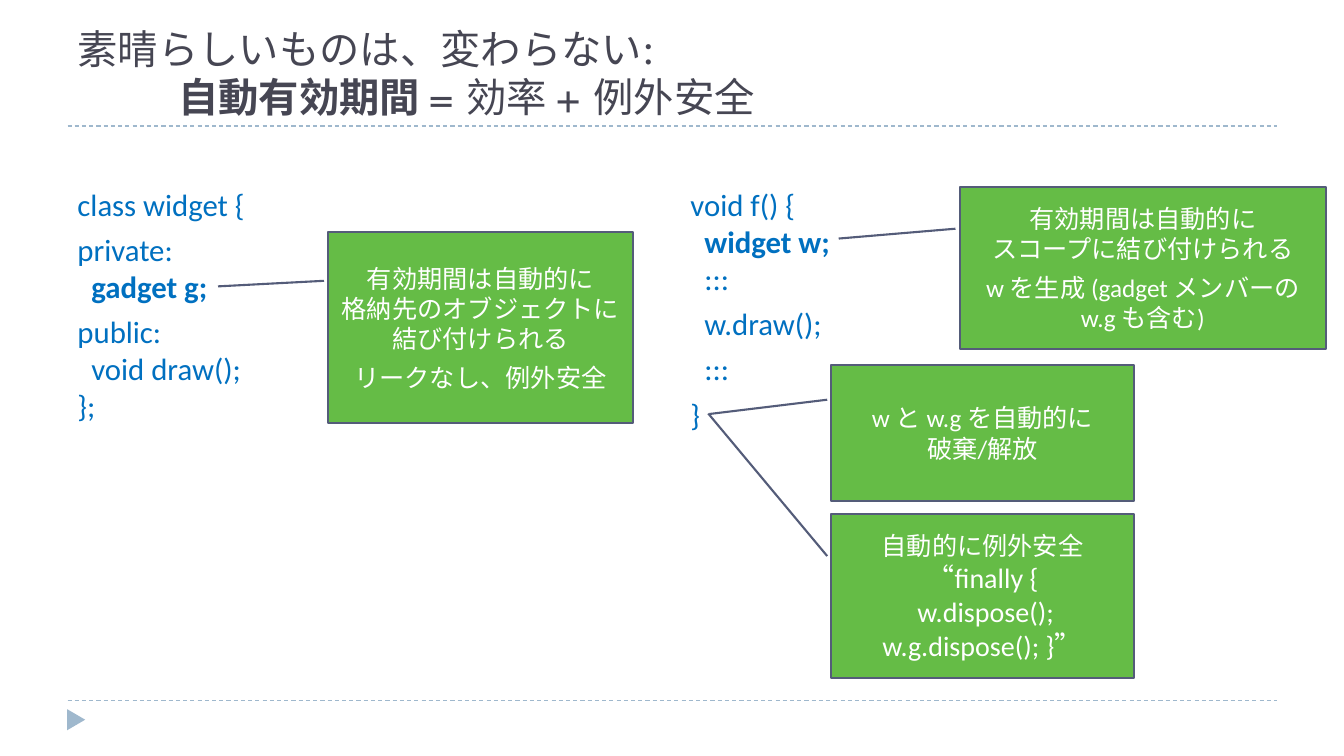
from dataclasses import dataclass

from lxml import etree
from pptx import Presentation
from pptx.dml.color import RGBColor
from pptx.enum.dml import MSO_LINE
from pptx.enum.shapes import MSO_CONNECTOR, MSO_SHAPE
from pptx.enum.text import MSO_ANCHOR, PP_ALIGN
from pptx.oxml.ns import qn
from pptx.util import Inches, Pt

DASH = MSO_LINE.DASH
STRAIGHT = MSO_CONNECTOR.STRAIGHT
CALLOUT, TRIANGLE = MSO_SHAPE.LINE_CALLOUT_1, MSO_SHAPE.ISOSCELES_TRIANGLE
BOTTOM, MIDDLE, TOP = MSO_ANCHOR.BOTTOM, MSO_ANCHOR.MIDDLE, MSO_ANCHOR.TOP
LEFT, CENTER = PP_ALIGN.LEFT, PP_ALIGN.CENTER


@dataclass(frozen=True)
class Theme:
    ink: RGBColor = RGBColor(0x46, 0x46, 0x53)
    code: RGBColor = RGBColor(0x00, 0x70, 0xC0)
    rule: RGBColor = RGBColor(0x9F, 0xB8, 0xCD)
    note: RGBColor = RGBColor(0x65, 0xBC, 0x46)
    edge: RGBColor = RGBColor(0x54, 0x5C, 0x79)
    white: RGBColor = RGBColor(0xFF, 0xFF, 0xFF)
    head: str = "TeX Gyre Bonum"
    body: str = "Calibri"
    title_size: float = 28.8
    code_size: float = 22
    note_size: float = 18
    quote_size: float = 20


THEME = Theme()


def put_text(frame, paras, font, size, color, anchor=TOP, align=LEFT, gap=0):
    """Fill a frame; each paragraph is a list of (text, bold, size or None)."""
    frame.word_wrap = True
    frame.vertical_anchor = anchor
    for i, runs in enumerate(paras):
        para = frame.paragraphs[0] if i == 0 else frame.add_paragraph()
        para.alignment = align
        para.space_before = Pt(gap if i else 0)
        for text, bold, own in runs:
            for j, line in enumerate(text.split("\n")):
                if j:
                    para.add_line_break()
                if line:
                    run = para.add_run()
                    run.text = line
                    run.font.name = font
                    run.font.size = Pt(own or size)
                    run.font.bold = bold
                    run.font.color.rgb = color


def add_box(slide, box):
    return slide.shapes.add_textbox(*map(Inches, box)).text_frame


def add_rule(slide, left, top, width):
    line = slide.shapes.add_connector(
        STRAIGHT, Inches(left), Inches(top), Inches(left + width), Inches(top))
    line.line.color.rgb = THEME.rule
    line.line.width = Pt(0.75)
    line.line.dash_style = DASH
    etree.SubElement(line._element.spPr, qn("a:effectLst"))


def add_title(slide, box):
    left, top, width, height = box
    frame = add_box(slide, box)
    put_text(frame, [
        [("素晴らしいものは、変わらない:", False, None)],
        [("自動有効期間 ", True, None), ("= 効率 + 例外安全", False, None)],
    ], THEME.head, THEME.title_size, THEME.ink, BOTTOM)
    frame.paragraphs[1]._p.get_or_add_pPr().set("marL", str(Inches(1)))
    add_rule(slide, left, top + height, width)


def add_footer(slide, box):
    left, top, width, height = box
    add_rule(slide, left, top, width)
    mark = slide.shapes.add_shape(
        TRIANGLE, Inches(left - 0.02), Inches(top + 0.1), Inches(0.21), Inches(0.18))
    mark.rotation = 90
    mark.shadow.inherit = False
    mark.fill.solid()
    mark.fill.fore_color.rgb = THEME.rule
    mark.line.fill.background()


def add_code(slide, box, paras):
    put_text(add_box(slide, box), paras, THEME.body, THEME.code_size,
             THEME.code, gap=6)


def add_note(slide, box, tip, paras):
    """Callout whose leader ends at tip, given as (y, x) shares of the box."""
    note = slide.shapes.add_shape(CALLOUT, *map(Inches, box))
    for i, share in enumerate((0.256, -0.012, *tip)):
        note.adjustments[i] = share
    note.shadow.inherit = False
    note.fill.solid()
    note.fill.fore_color.rgb = THEME.note
    note.line.color.rgb = THEME.edge
    note.line.width = Pt(1.5)
    put_text(note.text_frame, paras, THEME.body, THEME.note_size,
             THEME.white, MIDDLE, CENTER, 6)


def plain(*texts):
    return [[(text, False, None)] for text in texts]


def main():
    deck = Presentation()
    deck.slide_width, deck.slide_height = Inches(13.33), Inches(7.5)
    slide = deck.slides.add_slide(deck.slide_layouts[6])

    add_footer(slide, (0.67, 6.95, 12, 0.4))
    add_title(slide, (0.67, 0.25, 12, 1))

    add_code(slide, (0.67, 1.79, 5.89, 4.94), [
        *plain("class widget {"),
        [("private:\n  ", False, None), ("gadget g;", True, None)],
        *plain("public:\n  void draw();\n};"),
    ])
    add_code(slide, (6.75, 1.79, 5.89, 4.94), [
        [("void f() {\n  ", False, None), ("widget w;\n  ", True, None),
         (":::", False, None)],
        *plain("  w.draw();", "  :::", "}"),
    ])

    add_note(slide, (3.25, 2.3, 3.03, 1.9), (0.285, -0.359), plain(
        "有効期間は自動的に\n格納先のオブジェクトに結び付けられる",
        "リークなし、例外安全"))
    add_note(slide, (9.52, 1.86, 3.63, 1.6), (0.317, -0.331), plain(
        "有効期間は自動的に\nスコープに結び付けられる",
        "w を生成 (gadget メンバーの w.g も含む)"))
    add_note(slide, (8.24, 3.62, 3.01, 1.35), (0.361, -0.4), plain(
        "w と w.g を自動的に\n破棄/解放"))
    add_note(slide, (8.24, 5.1, 3.01, 1.63), (-0.612, -0.404), [[
        ("自動的に例外安全\n", False, None),
        ("“finally {\n w.dispose(); w.g.dispose(); }”", False, THEME.quote_size),
    ]])

    deck.save("out.pptx")


if __name__ == "__main__":
    main()
